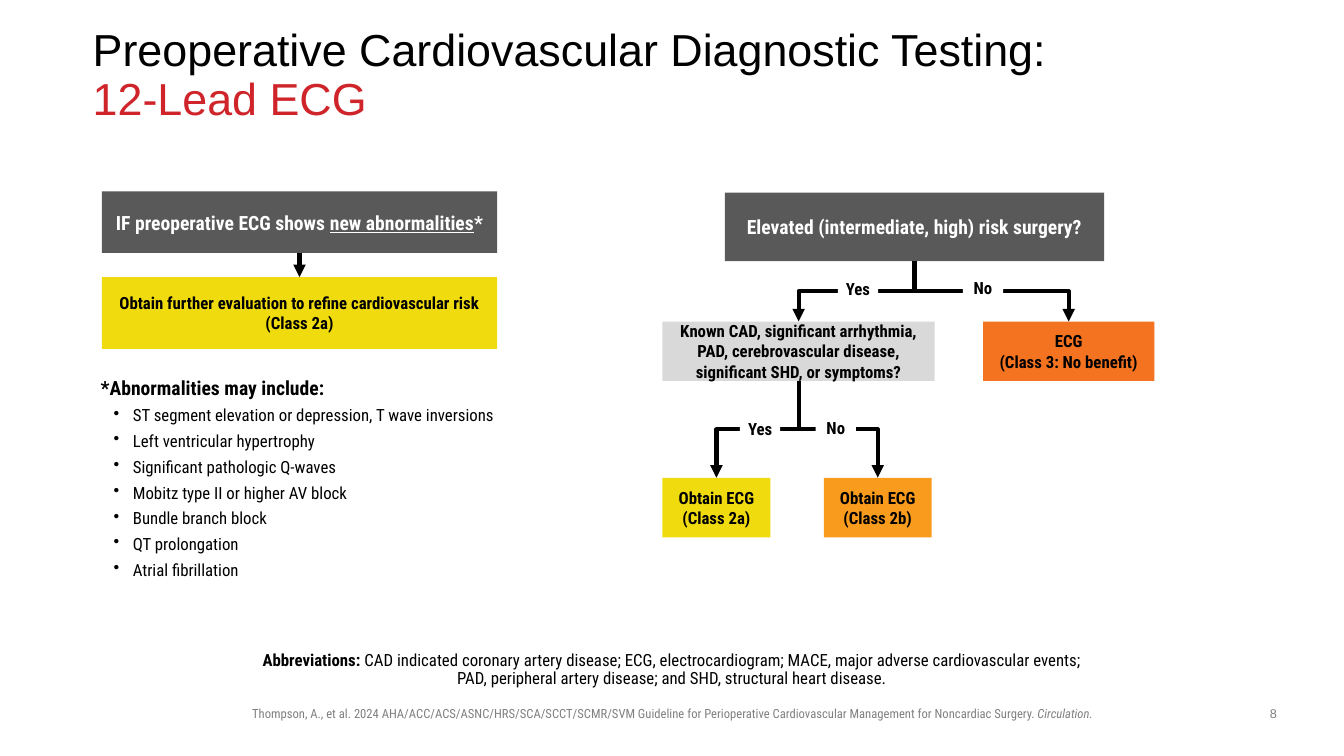
import pptx
import pptx.util
import pptx.dml.color
import pptx.enum.shapes
import pptx.enum.text
import pptx.oxml
import pptx.oxml.ns

Pt = pptx.util.Pt
qn = pptx.oxml.ns.qn
Link = pptx.enum.shapes.MSO_CONNECTOR
Side = pptx.enum.text.PP_ALIGN
Hold = pptx.enum.text.MSO_ANCHOR

deck = pptx.Presentation()
deck.slide_width = pptx.util.Inches(13.33)
deck.slide_height = pptx.util.Inches(7.5)
col, row = deck.slide_width / 100, deck.slide_height / 100
slide = deck.slides.add_slide(deck.slide_layouts[6])
cond = "Roboto Condensed"


def hue(code):
    return pptx.dml.color.RGBColor.from_string(code)


def put(at, lines, fill=None, size=12, ink="000000", bold=True, face=cond,
        side=Side.CENTER, hold=Hold.MIDDLE, pad=(0.1, 0.05)):
    x, y, w, h = at
    place = [int(v) for v in (x * col, y * row, w * col, h * row)]
    if fill:
        box = slide.shapes.add_shape(pptx.enum.shapes.MSO_SHAPE.RECTANGLE, *place)
        box.shadow.inherit = False
        box.fill.solid()
        box.fill.fore_color.rgb = hue(fill)
        box.line.fill.background()
    else:
        box = slide.shapes.add_textbox(*place)
    frame = box.text_frame
    frame.word_wrap = True
    frame.vertical_anchor = hold
    frame.margin_left = frame.margin_right = pptx.util.Inches(pad[0])
    frame.margin_top = frame.margin_bottom = pptx.util.Inches(pad[1])
    for i, line in enumerate(lines):
        para = frame.add_paragraph() if i else frame.paragraphs[0]
        para.text = line
        para.alignment = side
        para.font.size = Pt(size)
        para.font.name = face
        para.font.bold = bold
        para.font.color.rgb = hue(ink)
    return box


foot = put((17.7, 92.67, 64.67, 3.33),
           ["Thompson, A., et al. 2024 AHA/ACC/ACS/ASNC/HRS/SCA/SCCT/SCMR/SVM Guideline for "
            "Perioperative Cardiovascular Management for Noncardiac Surgery. "],
           size=9, ink="808080", bold=False, hold=Hold.TOP)
part = foot.text_frame.paragraphs[0].add_run()
part.text = "Circulation."
part.font.italic = True

title = put((6.9, 5.33, 86.27, 9.6), ["Preoperative Cardiovascular Diagnostic Testing:\v"],
            size=32, bold=False, face="Arial", side=Side.LEFT, pad=(0, 0))
para = title.text_frame.paragraphs[0]
para.line_spacing = 0.9
part = para.add_run()
part.text = "12-Lead ECG"
part.font.color.rgb = hue("CF2429")

found = put((7.58, 25.33, 29.41, 8.13), ["IF preoperative ECG shows "],
            "595959", 14, "FFFFFF")
for text, under in (("new abnormalities", True), ("*", False)):
    part = found.text_frame.paragraphs[0].add_run()
    part.text = text
    part.font.underline = under
refine = put((7.58, 36.67, 29.41, 9.47),
             ["Obtain further evaluation to refine cardiovascular risk", "(Class 2a)"], "F0DB0E")

signs = put((6.75, 49.07, 31.21, 28.53), ["*Abnormalities may include:"],
            size=14, side=Side.LEFT, hold=Hold.TOP)
for text in ("ST segment elevation or depression, T wave inversions",
             "Left ventricular hypertrophy", "Significant pathologic Q-waves",
             "Mobitz type II or higher AV block", "Bundle branch block",
             "QT prolongation", "Atrial fibrillation"):
    para = signs.text_frame.add_paragraph()
    para.text = text
    para.space_before = Pt(4)
    prop = para._p.get_or_add_pPr()
    prop.set("marL", str(pptx.util.Inches(0.32)))
    prop.set("indent", str(pptx.util.Inches(-0.19)))
    pptx.oxml.ns.qn
    bullet = prop.makeelement(qn("a:buChar"), {"char": "•"})
    prop.append(bullet)
    para.font.size = Pt(12)
    para.font.name = cond
    para.font.color.rgb = hue("000000")

risk = put((53.94, 25.47, 28.21, 9.07), ["Elevated (intermediate, high) risk surgery?"],
           "595959", 14, "FFFFFF")
known = put((49.29, 42.53, 20.26, 7.87),
            ["Known CAD, significant arrhythmia, PAD, cerebrovascular disease, "
             "significant SHD, or symptoms?"], "D9D9D9")
none = put((73.14, 42.53, 12.75, 7.87), ["ECG\v(Class 3: No benefit)"], "F47320")
good = put((49.29, 63.2, 8.03, 7.87), ["Obtain ECG", "(Class 2a)"], "F0DB0E")
fair = put((61.29, 63.2, 8.03, 7.87), ["Obtain ECG", "(Class 2b)"], "F99B1D")

for top, end in ((found, refine), (risk, known), (risk, none), (known, good), (known, fair)):
    x1, y1 = top.left + top.width // 2, top.top + top.height
    x2, y2 = end.left + end.width // 2, end.top
    midx, midy = (x1 + x2) // 2, (y1 + y2) // 2
    long, wide = (y2 - y1) // 2, abs(x2 - x1) // 2
    turn = 270 if x2 > x1 else 90
    reach = -long if x2 > x1 else long
    arrow = slide.shapes.add_connector(Link.ELBOW if wide else Link.STRAIGHT,
                                       midx - reach, midy - wide, midx + reach, midy + wide)
    prop = arrow._element.spPr
    prop.find(qn("a:xfrm")).set("rot", str(turn * 60000))
    arrow.line.width = Pt(3)
    arrow.line.color.rgb = hue("000000")
    stroke = prop.find(qn("a:ln"))
    stroke.append(stroke.makeelement(qn("a:tailEnd"), {"type": "triangle"}))
    prop.append(prop.makeelement(qn("a:effectLst"), {}))

for x, y, text in ((55.06, 55.33, "Yes"), (60.69, 55.2, "No"),
                   (62.34, 36.93, "Yes"), (71.64, 36.8, "No")):
    put((x, y, 3, 2.67), [text], "FFFFFF", hold=Hold.TOP, pad=(0, 0))

terms = put((14.1, 85.6, 71.79, 6.13), ["Abbreviations: "], bold=False, hold=Hold.BOTTOM)
para = terms.text_frame.paragraphs[0]
para.line_spacing = 0.9
para.runs[0].font.bold = True
para.add_run().text = ("CAD indicated coronary artery disease; ECG, electrocardiogram; "
                       "MACE, major adverse cardiovascular events;")
para.add_line_break()
para.add_run().text = "PAD, peripheral artery disease; and SHD, structural heart disease."

put((93.17, 92.67, 3.15, 3.47), ["8"], size=9, ink="808080", bold=False,
    face="Arial", hold=Hold.TOP)

deck.save("out.pptx")
